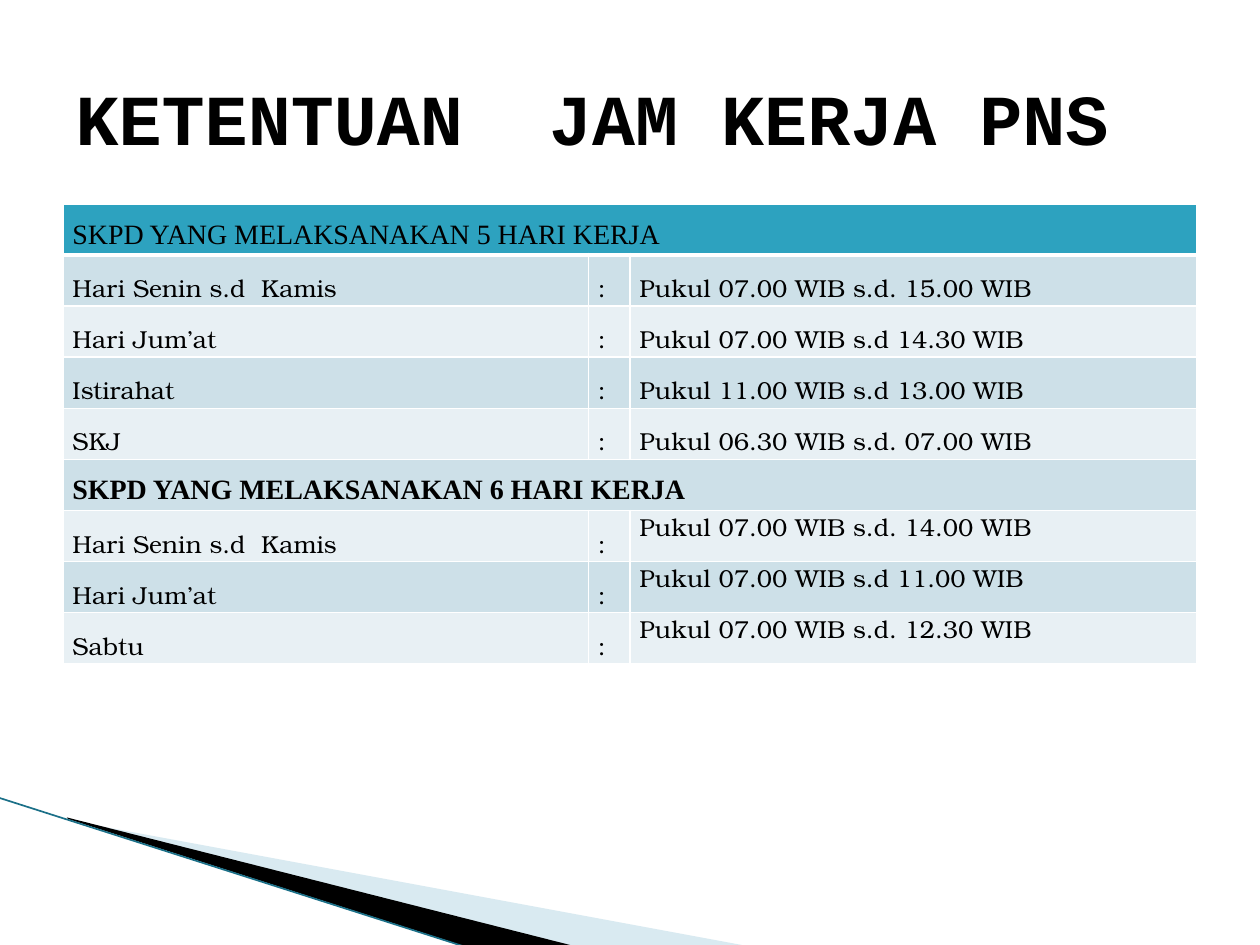
from lxml import etree
from pptx import Presentation
from pptx.dml.color import RGBColor
from pptx.enum.shapes import MSO_CONNECTOR
from pptx.enum.text import MSO_ANCHOR, PP_ALIGN
from pptx.oxml.ns import qn
from pptx.util import Cm, Pt

LEFT, JUSTIFY = PP_ALIGN.LEFT, PP_ALIGN.JUSTIFY
MIDDLE = MSO_ANCHOR.MIDDLE
STRAIGHT = MSO_CONNECTOR.STRAIGHT

# Content: heading, spacing of the hours, rows
TITLE = "KETENTUAN  JAM KERJA PNS"
GROUPS = [
    ("SKPD YANG MELAKSANAKAN 5 HARI KERJA", 1.5, [
        ("Hari Senin s.d  Kamis", "Pukul 07.00 WIB s.d. 15.00 WIB"),
        ("Hari Jum’at", "Pukul 07.00 WIB s.d 14.30 WIB"),
        ("Istirahat", "Pukul 11.00 WIB s.d 13.00 WIB"),
        ("SKJ", "Pukul 06.30 WIB s.d. 07.00 WIB"),
    ]),
    ("SKPD YANG MELAKSANAKAN 6 HARI KERJA", 1, [
        ("Hari Senin s.d  Kamis", "Pukul 07.00 WIB s.d. 14.00 WIB"),
        ("Hari Jum’at", "Pukul 07.00 WIB s.d 11.00 WIB"),
        ("Sabtu", "Pukul 07.00 WIB s.d. 12.30 WIB"),
    ]),
]
WIDTHS = [10.59, 0.84, 11.43]
ROW = 1.03
HEAD, BANDS = "2DA2BF", ("E8F0F4", "CDE0E8")
HANG = 0.96
# Corner wedges: colour, opacity in percent, frame and points in cm
WEDGES = [
    ("A0CBDC", 40, (1.98, 13.89, 10.57, 4.01),
     [(1.4, 16.54), (15.11, 19.08), (11.58, 19.08), (1.4, 16.51)]),
    ("000000", 100, (-0.15, 16.08, 10.57, 2.34),
     [(1.35, 16.48), (11.61, 19.08), (9.45, 19.1), (1.37, 16.51)]),
]


def paint(fill, color):
    fill.solid()
    fill.fore_color.rgb = RGBColor.from_string(color)


def write(par, text, font, size, bold=False):
    run = par.add_run()
    run.text = text
    run.font.name, run.font.size, run.font.bold = font, Pt(size), bold
    paint(run.font.fill, "000000")


def reframe(shape, frame):
    """Give a freeform a new frame while its outline stays in place."""
    left, top, width, height = map(Cm, frame)
    shift = {"x": shape.left - left, "y": shape.top - top}
    trace = shape._element.spPr.find(".//" + qn("a:path"))
    for point in trace.iter(qn("a:pt")):
        for axis, step in shift.items():
            point.set(axis, str(int(point.get(axis)) + step))
    trace.set("w", str(width))
    trace.set("h", str(height))
    shape.left, shape.top, shape.width, shape.height = left, top, width, height


def edge(cell, top, bottom):
    props = cell._tc.get_or_add_tcPr()
    sides = (("a:lnL", 1), ("a:lnR", 1), ("a:lnT", top), ("a:lnB", bottom))
    for i, (tag, width) in enumerate(sides):
        line = etree.Element(qn(tag), w=str(Pt(width)))
        solid = etree.SubElement(line, qn("a:solidFill"))
        etree.SubElement(solid, qn("a:srgbClr"), val="FFFFFF")
        props.insert(i, line)


def put(cell, text, font, size, bold=False, gap=1.5, hang=0):
    cell.margin_left = cell.margin_right = Cm(0.19)
    cell.margin_top = cell.margin_bottom = 0
    par = cell.text_frame.paragraphs[0]
    par.alignment, par.line_spacing = JUSTIFY, gap
    if hang:
        props = par._p.get_or_add_pPr()
        props.set("marL", str(Cm(hang)))
        props.set("indent", str(-Cm(hang)))
    write(par, text, font, size, bold)


def main():
    deck = Presentation()
    deck.slide_width, deck.slide_height = Cm(25.4), Cm(19.05)
    slide = deck.slides.add_slide(deck.slide_layouts[5])
    shapes = slide.shapes

    # Corner decoration
    for color, alpha, frame, points in WEDGES:
        start, *rest = [(Cm(x), Cm(y)) for x, y in points]
        pen = shapes.build_freeform(*start)
        pen.add_line_segments(rest)
        wedge = pen.convert_to_shape()
        reframe(wedge, frame)
        wedge.shadow.inherit = False
        wedge.line.fill.background()
        paint(wedge.fill, color)
        if alpha < 100:
            tint = wedge._element.spPr.find(".//" + qn("a:srgbClr"))
            etree.SubElement(tint, qn("a:alpha"), val=str(alpha * 1000))
    rule = shapes.add_connector(STRAIGHT, Cm(-0.03), Cm(16.08),
                                Cm(9.42), Cm(19.1))
    paint(rule.line.fill, "1B7088")
    rule.line.width = Pt(0.95)
    etree.SubElement(rule._element.spPr, qn("a:effectLst"))

    # Title
    title = shapes.title
    title.left, title.top = Cm(1.27), Cm(0.76)
    title.width, title.height = Cm(22.86), Cm(3.18)
    frame = title.text_frame
    frame.vertical_anchor = MIDDLE
    frame.paragraphs[0].alignment = LEFT
    write(frame.paragraphs[0], TITLE, "Courier New", 41, True)

    # Table: a merged heading row before the rows of each group
    rows = []
    for name, gap, times in GROUPS:
        rows.append((gap, (name,)))
        rows += [(gap, (day, ":", hours)) for day, hours in times]
    table = shapes.add_table(len(rows), len(WIDTHS), Cm(1.27), Cm(4.11),
                             Cm(sum(WIDTHS)), Cm(ROW * len(rows))).table
    table.first_row = table.horz_banding = False
    for col, width in zip(table.columns, WIDTHS):
        col.width = Cm(width)
    for r, (gap, texts) in enumerate(rows):
        table.rows[r].height = Cm(ROW)
        cells = list(table.rows[r].cells)
        for cell in cells:
            paint(cell.fill, BANDS[r % 2] if r else HEAD)
            edge(cell, 3 if r == 1 else 1, 1 if r else 3)
        if len(texts) == 1:
            cells[0].merge(cells[-1])
            put(cells[0], texts[0], "Times New Roman", 16, r > 0, hang=HANG)
            continue
        for c, text in enumerate(texts):
            put(cells[c], text, "TeX Gyre Bonum", 14,
                gap=gap if c == 2 else 1.5, hang=0 if c else HANG)

    deck.save("out.pptx")


if __name__ == "__main__":
    main()
